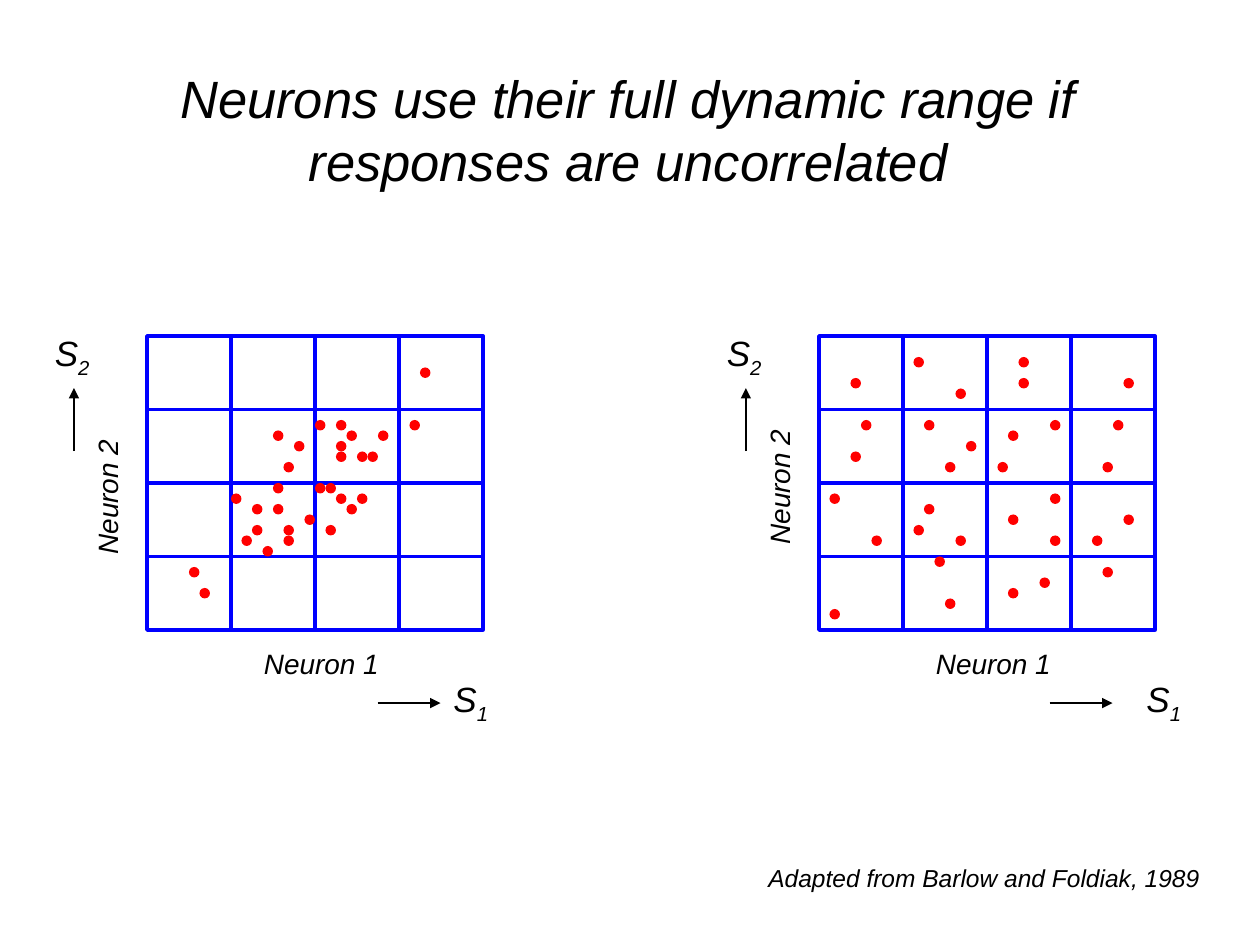
from dataclasses import dataclass
from pptx import Presentation
from pptx.dml.color import RGBColor
from pptx.enum.shapes import MSO_CONNECTOR, MSO_SHAPE
from pptx.enum.text import MSO_ANCHOR, PP_ALIGN
from pptx.oxml.ns import qn
from pptx.util import Inches, Pt
from lxml.etree import SubElement


@dataclass(frozen=True)
class Theme:
    font: str = "Arial"
    ink: RGBColor = RGBColor(0, 0, 0)
    grid: RGBColor = RGBColor(0, 0, 255)
    dot: RGBColor = RGBColor(255, 0, 0)
    title: Pt = Pt(30)
    sign: Pt = Pt(20)
    label: Pt = Pt(16)
    credit: Pt = Pt(14)


theme = Theme()
deck = Presentation()
deck.slide_width, deck.slide_height = Inches(10), Inches(7.5)
slide = deck.slides.add_slide(deck.slide_layouts[5])
shapes = slide.shapes


def add_line(x1, y1, x2, y2, color, width, arrow=False):
    line = shapes.add_connector(MSO_CONNECTOR.STRAIGHT, Inches(x1), Inches(y1),
                                Inches(x2), Inches(y2))
    line.line.color.rgb = color
    line.line.width = Pt(width)
    if arrow:
        SubElement(line.line._get_or_add_ln(), qn("a:tailEnd"), type="triangle")
    SubElement(line._element.spPr, qn("a:effectLst"))


def add_text(x, y, w, h, text, size, sub="", turn=0):
    box = shapes.add_textbox(Inches(x), Inches(y), Inches(w), Inches(h))
    box.rotation = turn
    box.text_frame.word_wrap = True
    para = box.text_frame.paragraphs[0]
    font = para.font
    font.name, font.size, font.italic = theme.font, size, True
    font.color.rgb = theme.ink
    para.add_run().text = text
    if sub:
        run = para.add_run()
        run.text = sub
        run.font._element.set("baseline", "-25000")


# Title
title = shapes.title
title.left, title.top = Inches(0.57), Inches(0.47)
title.width, title.height = Inches(8.83), Inches(1.1)
frame = title.text_frame
frame.text = "Neurons use their full dynamic range if responses are uncorrelated"
frame.word_wrap = True
frame.vertical_anchor = MSO_ANCHOR.TOP
para = frame.paragraphs[0]
para.alignment = PP_ALIGN.CENTER
font = para.font
font.name, font.size, font.italic = theme.font, theme.title, True
font.color.rgb = theme.ink

# Dots as (column, row) in steps of 1/12 inch from the grid's top left
step = 1 / 12
joined = [
    (5, 24), (13, 18), (4, 22), (10, 18), (10, 16), (12, 9), (17, 14),
    (13, 19), (20, 11), (18, 8), (13, 12), (14, 10), (16, 8), (12, 16),
    (15, 17), (12, 14), (19, 16), (18, 15), (20, 15), (8, 15), (18, 10),
    (18, 11), (21, 11), (17, 18), (19, 9), (25, 8), (26, 3), (22, 9),
    (9, 19), (11, 20), (16, 14),
]
spread = [
    (1, 26), (5, 19), (1, 15), (3, 11), (4, 8), (3, 4), (12, 25), (11, 21),
    (9, 2), (13, 5), (10, 8), (12, 12), (14, 10), (9, 18), (13, 19), (10, 16),
    (18, 24), (21, 23), (18, 17), (22, 19), (22, 15), (27, 22), (26, 19),
    (29, 17), (27, 12), (28, 8), (29, 4), (19, 4), (19, 2), (17, 12),
    (22, 8), (18, 9),
]

# Both plots: left edge, dots, top of the side label, left of the S1 sign
top, wide, high, cells = 32 * step, 32 * step, 28 * step, 4
plots = [(14 * step, joined, 3.65, 3.5), (78 * step, spread, 3.57, 9)]
for left, dots, side, sign in plots:
    # Frame and grid
    frame = shapes.add_shape(MSO_SHAPE.RECTANGLE, Inches(left), Inches(top),
                             Inches(wide), Inches(high))
    frame.shadow.inherit = False
    frame.fill.background()
    frame.line.color.rgb = theme.grid
    frame.line.width = Pt(2)
    for i in range(1, cells):
        x, y = left + i * wide / cells, top + i * high / cells
        add_line(x, top, x, top + high, theme.grid, 2)
        add_line(left, y, left + wide, y, theme.grid, 2)

    # Dots
    for col, row in dots:
        dot = shapes.add_shape(MSO_SHAPE.OVAL, Inches(left + col * step),
                               Inches(top + row * step), Inches(step), Inches(step))
        dot.shadow.inherit = False
        dot.fill.solid()
        dot.fill.fore_color.rgb = theme.dot
        dot.line.fill.background()

    # Axis labels, arrows and signs
    add_text(left + 0.83, 5.08, 1.33, 0.37, "Neuron 1", theme.label)
    add_text(left - 0.98, side, 1.33, 0.37, "Neuron 2", theme.label, turn=270)
    add_line(left + 1.83, 5.58, left + 2.33, 5.58, theme.ink, 0.75, arrow=True)
    add_line(left - 0.58, 3.58, left - 0.58, 3.08, theme.ink, 0.75, arrow=True)
    add_text(sign, 5.33, 1.33, 0.43, "S", theme.sign, sub="1")
    add_text(left - 0.83, 2.58, 0.5, 0.43, "S", theme.sign, sub="2")

# Credit
add_text(6, 6.8, 4, 0.33, "Adapted from Barlow and Foldiak, 1989", theme.credit)

deck.save("out.pptx")
